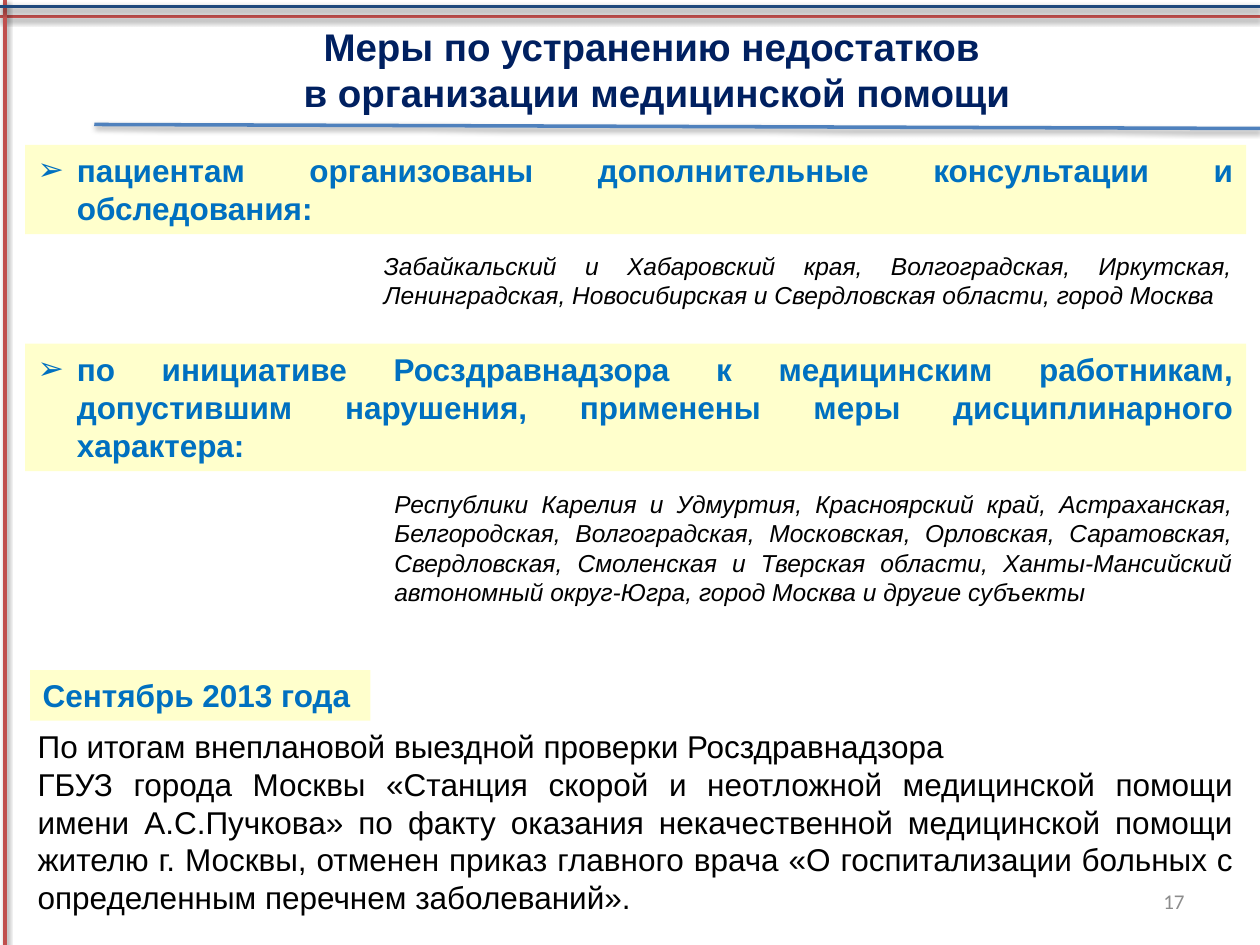
from dataclasses import dataclass

from lxml import etree
from pptx import Presentation
from pptx import util as u
from pptx.dml.color import RGBColor
from pptx.enum import shapes, text
from pptx.oxml import ns

ALIGN = text.PP_ALIGN


@dataclass
class Theme:
    font: str = "Arial"
    plain: str = "Calibri"
    navy: str = "002060"
    blue: str = "0070C0"
    black: str = "000000"
    gray: str = "8C8C8C"
    cream: str = "FFFFCC"
    red: str = "C0504D"
    dark: str = "1F497D"
    rule: str = "4F81BD"
    head: int = 22
    body: int = 18
    note: int = 14
    small: int = 12


class Deck:
    def __init__(self, theme):
        self.theme = theme
        self.prs = Presentation()
        self.prs.slide_width, self.prs.slide_height = u.Cm(25.4), u.Cm(19.05)
        self.slide = self.prs.slides.add_slide(self.prs.slide_layouts[5])

    def line(self, x1, y1, x2, y2, color):
        # The theme's soft shadow is kept on every line
        line = self.slide.shapes.add_connector(
            shapes.MSO_CONNECTOR.STRAIGHT, *map(u.Cm, (x1, y1, x2, y2)))
        line.line.color.rgb = RGBColor.from_string(color)
        line.line.width = u.Pt(2)

    def fill(self, shape, paras, size, color, align=ALIGN.JUSTIFY, font=None,
             bold=False, italic=False, bullet=None, anchor=text.MSO_ANCHOR.TOP):
        frame = shape.text_frame
        frame.word_wrap = True
        frame.auto_size = text.MSO_AUTO_SIZE.NONE
        frame.vertical_anchor = anchor
        for i, words in enumerate(paras):
            para = frame.add_paragraph() if i else frame.paragraphs[0]
            if bullet:
                self.mark(para, bullet)
            para.alignment = align
            run = para.add_run()
            run.text = words
            run.font.name = font or self.theme.font
            run.font.size = u.Pt(size)
            run.font.bold, run.font.italic = bold, italic
            run.font.color.rgb = RGBColor.from_string(color)

    def mark(self, para, char):
        props = para._p.get_or_add_pPr()
        indent = u.Cm(0.79)
        props.set("marL", str(indent))
        props.set("indent", str(-indent))
        etree.SubElement(props, ns.qn("a:buFont")).set("typeface", "Arial")
        etree.SubElement(props, ns.qn("a:buChar")).set("char", char)

    def title(self, box, paras):
        shape = self.slide.shapes.title
        shape.left, shape.top, shape.width, shape.height = map(u.Cm, box)
        self.fill(shape, paras, self.theme.head, self.theme.navy,
                  ALIGN.CENTER, bold=True)

    def text(self, box, paras, size, color, **style):
        shape = self.slide.shapes.add_textbox(*map(u.Cm, box))
        self.fill(shape, paras, size, color, **style)

    def band(self, box, words, **style):
        shape = self.slide.shapes.add_shape(
            shapes.MSO_SHAPE.RECTANGLE, *map(u.Cm, box))
        shape.shadow.inherit = False
        shape.fill.solid()
        shape.fill.fore_color.rgb = RGBColor.from_string(self.theme.cream)
        shape.line.fill.background()
        self.fill(shape, [words], self.theme.body, self.theme.blue,
                  bold=True, **style)


def main():
    t = Theme()
    deck = Deck(t)
    left, wide = 0.51, 24.61

    # Frame lines
    deck.line(25.4, 0.33, 0, 0.33, t.red)
    deck.line(0.1, 0, 0.1, 19.05, t.red)
    deck.line(0, 0.13, 25.4, 0.13, t.dark)

    # Title and its rule
    deck.title((4.8, 0.33, 16.89, 2.13),
               ["Меры по устранению недостатков ",
                "в организации медицинской помощи"])
    deck.line(1.9, 2.51, 25.4, 2.59, t.rule)

    # Measures, each with the regions concerned
    measures = [
        ((left, 2.92, wide, 1.8),
         "пациентам организованы дополнительные консультации и обследования:",
         (7.49, 4.93, 17.6, 1.45),
         "Забайкальский и Хабаровский края, Волгоградская, Иркутская, "
         "Ленинградская, Новосибирская и Свердловская области, город Москва"),
        ((left, 6.93, wide, 2.57),
         "по инициативе Росздравнадзора к медицинским работникам, "
         "допустившим нарушения, применены меры дисциплинарного характера:",
         (7.7, 9.73, 17.4, 2.64),
         "Республики Карелия и Удмуртия, Красноярский край, Астраханская, "
         "Белгородская, Волгоградская, Московская, Орловская, Саратовская, "
         "Свердловская, Смоленская и Тверская области, Ханты-Мансийский "
         "автономный округ-Югра, город Москва и другие субъекты"),
    ]
    for box, head, area, places in measures:
        deck.band(box, head, bullet="➢")
        deck.text(area, [places], t.note, t.black, italic=True)

    # Case of September 2013
    deck.band((0.61, 13.51, 6.86, 1.02), "Сентябрь 2013 года", align=ALIGN.LEFT)
    deck.text((left, 14.53, wide, 4.11),
              ["По итогам внеплановой выездной проверки Росздравнадзора",
               "ГБУЗ города Москвы «Станция скорой и неотложной медицинской "
               "помощи имени А.С.Пучкова» по факту оказания некачественной "
               "медицинской помощи жителю г. Москвы, отменен приказ главного "
               "врача «О госпитализации больных с определенным перечнем "
               "заболеваний»."],
              t.body, t.black)

    # Page number
    deck.text((18.2, 17.65, 5.93, 1.02), ["17"], t.small, t.gray,
              align=ALIGN.RIGHT, font=t.plain, anchor=text.MSO_ANCHOR.MIDDLE)

    deck.prs.save("out.pptx")


if __name__ == "__main__":
    main()
